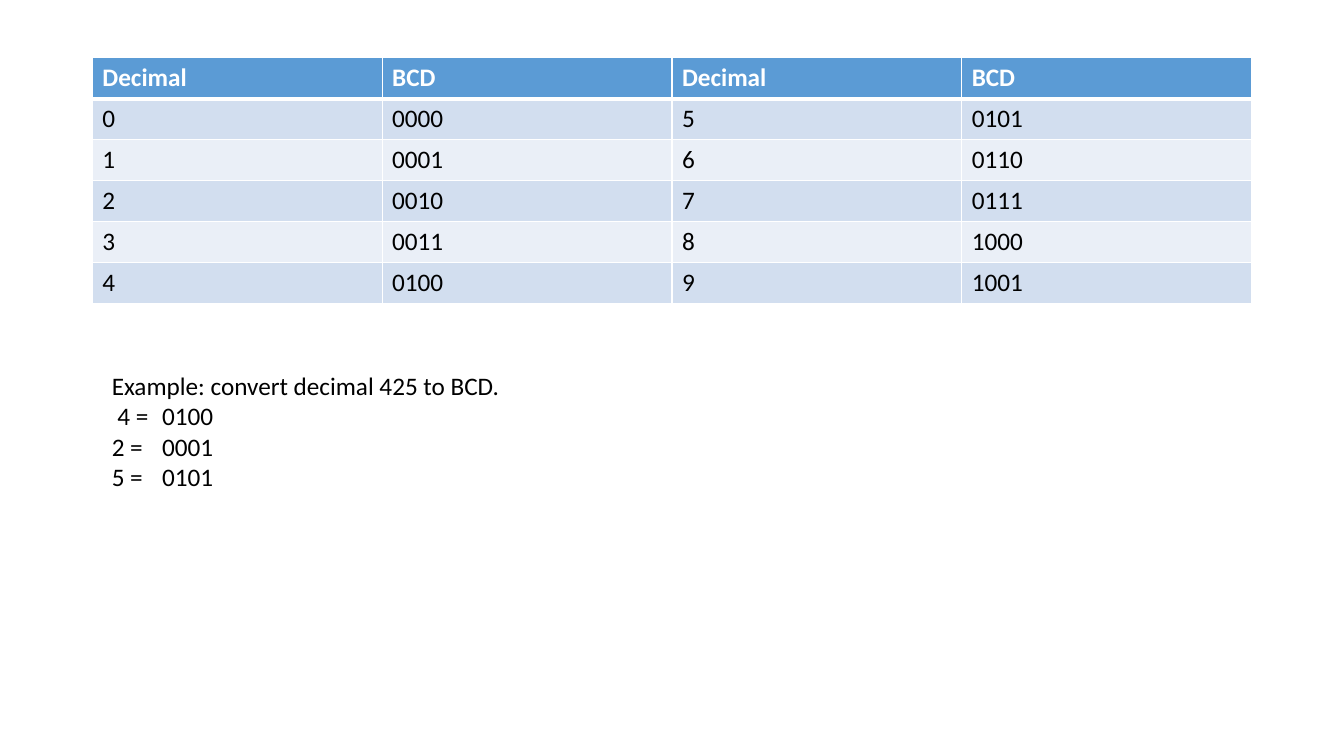
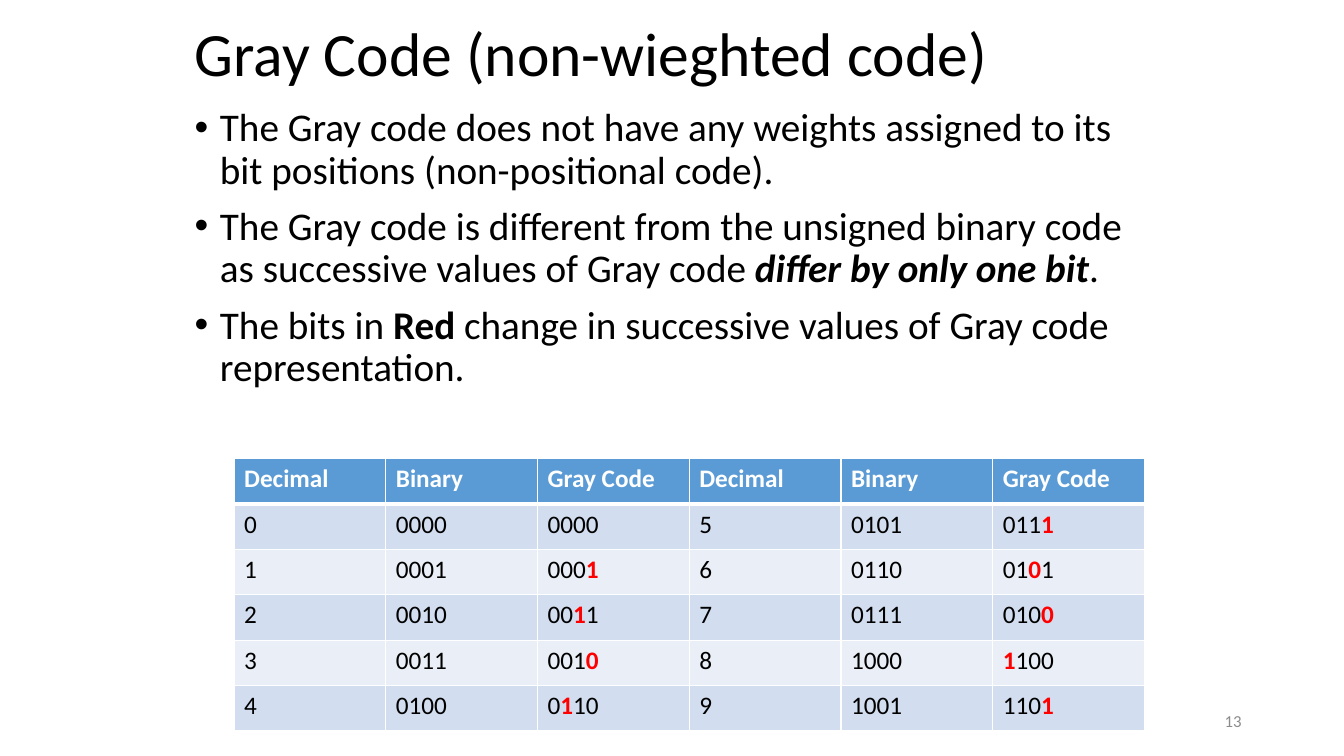
from lxml.etree import SubElement
from pptx import Presentation
from pptx.dml.color import RGBColor
from pptx.enum.text import MSO_ANCHOR, PP_ALIGN
from pptx.oxml.ns import qn
from pptx.util import Pt

PX = 9525
FONT = "Calibri"
COLORS = {
    "text": "000000", "white": "FFFFFF", "header": "5B9BD5", "odd": "D2DEEF",
    "even": "EAEFF7", "changed": "FF0000", "number": "8C8C8C",
}
CHANGED = {"bold": True, "color": "changed"}


def write(tf, paragraphs, size=18, color="text", bold=False, **para_fmt):
    """Fill a text frame; each paragraph is a list of (text, run format) pairs."""
    for i, runs in enumerate(paragraphs):
        p = tf.paragraphs[0] if i == 0 else tf.add_paragraph()
        for name, value in para_fmt.items():
            setattr(p, name, value)
        for text, fmt in runs:
            r = p.add_run()
            r.text = text
            fmt = {"name": FONT, "size": Pt(size), "bold": bold, "color": color} | fmt
            r.font.color.rgb = RGBColor.from_string(COLORS[fmt.pop("color")])
            for name, value in fmt.items():
                setattr(r.font, name, value)


def add_code_table(s, left, top, width, height, rows):
    """Add a banded table; each cell is a list of runs."""
    n_rows, n_cols = len(rows), len(rows[0])
    box = [v * PX for v in (left, top, width, height)]
    table = s.shapes.add_table(n_rows, n_cols, *box).table
    for i, row in enumerate(rows):
        table.rows[i].height = height * PX // n_rows
        fill = "header" if i == 0 else "odd" if i % 2 else "even"
        for j, runs in enumerate(row):
            cell = table.cell(i, j)
            tcPr = cell._tc.get_or_add_tcPr()
            for side in "LRTB":
                thick = (i, side) in ((0, "B"), (1, "T"))
                ln = SubElement(tcPr, qn(f"a:ln{side}"), w=str(Pt(3 if thick else 1)))
                SubElement(SubElement(ln, qn("a:solidFill")), qn("a:srgbClr"),
                           val=COLORS["white"])
            cell.fill.solid()
            cell.fill.fore_color.rgb = RGBColor.from_string(COLORS[fill])
            write(cell.text_frame, [runs], color="text" if i else "white", bold=i == 0)


prs = Presentation()
prs.slide_width, prs.slide_height = 1280 * PX, 720 * PX
blank = prs.slide_layouts[6]

# Cells for the digits 0 to 9
digits = []
for n in range(10):
    gray = f"{n ^ n >> 1:04b}"
    before = f"{n - 1 ^ n - 1 >> 1:04b}" if n else gray
    gray_runs = [(bit, {} if bit == old else CHANGED) for bit, old in zip(gray, before)]
    digits.append([[(str(n), {})], [(f"{n:04b}", {})], gray_runs])

# Slide 1: BCD
s = prs.slides.add_slide(blank)
header = [[(name, {})] for name in ("Decimal", "BCD")] * 2
rows = [digits[n][:2] + digits[n + 5][:2] for n in range(5)]
add_code_table(s, 88, 55, 1104, 234, [header] + rows)

example = ["Example: convert decimal 425 to BCD.", " 4 =\t0100", "2 =\t0001", "5 = \t0101"]
tf = s.shapes.add_textbox(*(v * PX for v in (97, 348, 1094, 156))).text_frame
tf.word_wrap = True
write(tf, [[(line, {})] for line in example])

# Slide 2: Gray code
s = prs.slides.add_slide(blank)
bullets = [
    [("The Gray code does not have any weights assigned to its bit positions "
      "(non-positional code).", {})],
    [("The Gray code is different from the unsigned binary code as successive values "
      "of Gray code ", {}),
     ("differ by only one bit", {"bold": True, "italic": True}), (".", {})],
    [("The bits in ", {}), ("Red ", {"bold": True}),
     ("change in successive values of Gray code representation.", {})],
]
texts = [
    ((176, 14, 928, 80), MSO_ANCHOR.MIDDLE, [[("Gray Code (non-wieghted code)", {})]],
     {"size": 44, "line_spacing": 0.9}),
    ((176, 98, 928, 552), MSO_ANCHOR.TOP, bullets,
     {"size": 28, "line_spacing": 0.9, "space_before": Pt(10)}),
    ((904, 667, 288, 38), MSO_ANCHOR.MIDDLE, [[("13", {})]],
     {"size": 12, "color": "number", "alignment": PP_ALIGN.RIGHT}),
]
for box, anchor, paragraphs, fmt in texts:
    tf = s.shapes.add_textbox(*(v * PX for v in box)).text_frame
    tf.word_wrap = True
    tf.vertical_anchor = anchor
    write(tf, paragraphs, **fmt)
    if paragraphs is bullets:
        for p in tf.paragraphs:
            pPr = p._p.get_or_add_pPr()
            pPr.set("marL", str(24 * PX))
            pPr.set("indent", str(-24 * PX))
            SubElement(pPr, qn("a:buFont"), typeface="Arial")
            SubElement(pPr, qn("a:buChar"), char="•")

header = [[(name, {})] for name in ("Decimal", "Binary", "Gray Code")] * 2
rows = [digits[n] + digits[n + 5] for n in range(5)]
add_code_table(s, 223, 437, 867, 259, [header] + rows)

prs.save("out.pptx")
